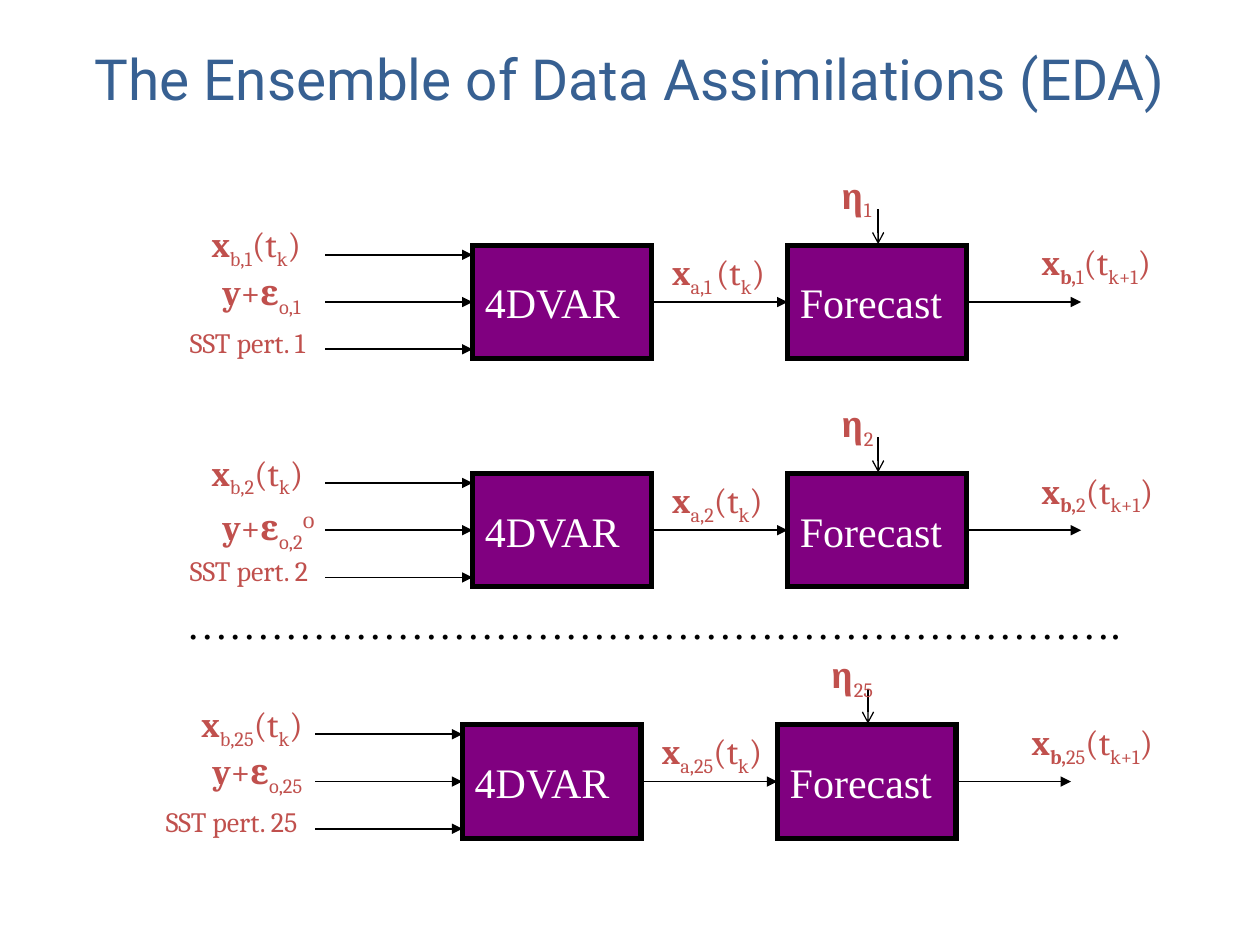
from dataclasses import dataclass

from lxml import etree
from pptx import Presentation
from pptx.dml.color import RGBColor
from pptx.enum import shapes, text
from pptx.oxml.ns import qn
from pptx.util import Pt


@dataclass(frozen=True)
class Theme:
    title_color: str = "376092"
    label_color: str = "C0504D"
    box_color: str = "800080"
    ink: str = "000000"
    paper: str = "FFFFFF"
    title_font: str = "Roboto"
    label_font: str = "Cambria"
    box_font: str = "Times New Roman"
    title_size: float = 32.4
    box_size: float = 24
    label_size: float = 20
    small_size: float = 16


BOLD, SUB, BOLD_SUB, SUPER = "bold", "sub", "bold sub", "super"


class Diagram:
    def __init__(self, slide, theme):
        self.slide, self.theme = slide, theme
        self.canvas = slide.shapes

    def start_group(self):
        self.canvas = self.slide.shapes.add_group_shape().shapes

    def end_group(self):
        self.canvas = self.slide.shapes

    def style(self, font, name, size, color):
        font.name, font.size = name, Pt(size)
        font.color.rgb = RGBColor.from_string(color)

    def text_box(self, left, top, width, height, words, name, size, color, wrap=False):
        frame = self.canvas.add_textbox(Pt(left), Pt(top), Pt(width), Pt(height)).text_frame
        frame.word_wrap = wrap
        frame.auto_size = text.MSO_AUTO_SIZE.SHAPE_TO_FIT_TEXT
        line = frame.paragraphs[0]
        line.text = words
        self.style(line.font, name, size, color)
        return frame

    def title(self, words):
        t = self.theme
        frame = self.text_box(36, 21.6, 648, 55.4, words, t.title_font, t.title_size,
                              t.title_color, wrap=True)
        frame.auto_size = text.MSO_AUTO_SIZE.NONE
        frame.vertical_anchor = text.MSO_ANCHOR.MIDDLE
        frame.margin_top, frame.margin_bottom = 0, Pt(9.6)
        frame.paragraphs[0].alignment = text.PP_ALIGN.CENTER

    def label(self, left, top, width, words, wrap=False):
        t = self.theme
        frame = self.text_box(left, top, width, 31.7, "", t.label_font, t.label_size,
                              t.label_color, wrap)
        for content, look in words:
            run = frame.paragraphs[0].add_run()
            run.text = content
            raised = look == SUPER
            self.style(run.font, t.box_font if raised else t.label_font,
                       t.box_size if raised else t.label_size, t.label_color)
            run.font.bold = BOLD in look
            if raised or SUB in look:
                run.font._element.set("baseline", "30000" if raised else "-25000")

    def box(self, left, top, width, height, words):
        t = self.theme
        step = self.canvas.add_shape(shapes.MSO_SHAPE.RECTANGLE,
                                     Pt(left), Pt(top), Pt(width), Pt(height))
        step.shadow.inherit = False
        step.fill.solid()
        step.fill.fore_color.rgb = RGBColor.from_string(t.box_color)
        step.line.color.rgb = RGBColor.from_string(t.ink)
        step.line.width = Pt(3)
        etree.SubElement(step.line._get_or_add_ln(), qn("a:miter"), lim="800000")
        frame = step.text_frame
        frame.word_wrap = False
        frame.vertical_anchor = text.MSO_ANCHOR.MIDDLE
        line = frame.paragraphs[0]
        line.text = words
        line.alignment = text.PP_ALIGN.LEFT
        self.style(line.font, t.box_font, t.box_size, t.paper)

    def arrow(self, x1, y1, x2, y2, width=1, head="triangle"):
        link = self.canvas.add_connector(shapes.MSO_CONNECTOR.STRAIGHT,
                                         Pt(x1), Pt(y1), Pt(x2), Pt(y2))
        link.line.color.rgb = RGBColor.from_string(self.theme.ink)
        link.line.width = Pt(width)
        etree.SubElement(link.line._get_or_add_ln(), qn("a:tailEnd"), type=head)
        etree.SubElement(link._element.spPr, qn("a:effectLst"))

    def member(self, x, y, number, analysis_gap="", extra=()):
        """One ensemble member; (x, y) is the corner of its 4DVAR box."""
        t = self.theme
        box_w, box_h, forecast_x = 102.2, 64.8, x + 180
        middle = y + box_h / 2
        wider = 8 * (len(number) - 1)
        time = [("(t", ""), ("k", SUB), (")", "")]
        next_time = [("(t", ""), ("k+1", SUB), (")", "")]
        self.start_group()

        # Boxes and arrows
        self.box(x, y, box_w, box_h, "4DVAR")
        self.box(forecast_x, y, box_w, box_h, "Forecast")
        for offset in (-27, 0, 27):
            self.arrow(x - 84.2, middle + offset, x, middle + offset)
        self.arrow(x + box_w, middle, forecast_x, middle)
        self.arrow(forecast_x + box_w, middle, x + 347.8, middle)
        self.arrow(x + 231.8, y - 20.6, x + 231.8, y - 0.7, 0.75, "arrow")

        # Inputs
        self.label(x - 156.2, y - 16.4, 72 + wider,
                   [("x", BOLD), (f"b,{number}", SUB), *time])
        self.label(x - 149.8, y + 10.8, 75.6,
                   [("y", BOLD), ("+", ""), ("ε", BOLD), (f"o,{number}", SUB), *extra],
                   wrap=True)
        self.text_box(x - 168.5 - wider, y + 42.1, 88.6 + wider, 26.6,
                      f"SST pert. {number}", t.label_font, t.small_size, t.label_color)

        # Analysis, model error and next background
        self.label(x + 107, y - 0.7, 71.3 + wider + 5 * len(analysis_gap),
                   [("x", BOLD), (f"a,{number}{analysis_gap}", SUB), *time])
        self.label(x + 203.4, y - 44.2, 33.1 + wider, [("η", BOLD), (number, SUB)])
        self.label(x + 318.2, y - 6.1, 89.3 + wider,
                   [("x", BOLD), ("b,", BOLD_SUB), (number, SUB), *next_time])
        self.end_group()


def main():
    deck = Presentation()
    deck.slide_width, deck.slide_height = Pt(720), Pt(540)
    theme = Theme()
    diagram = Diagram(deck.slides.add_slide(deck.slide_layouts[6]), theme)

    diagram.title("The Ensemble of Data Assimilations (EDA)")

    # Ensemble members
    diagram.member(270, 140.2, "1", analysis_gap=" ")
    diagram.member(270, 270.6, "2", extra=[("o", SUPER)])
    diagram.member(264.2, 414.2, "25")

    # Members left out
    omitted = diagram.text_box(99.4, 336.9, 553.7, 37.4, "…" * 22 + ".",
                               theme.box_font, theme.box_size, theme.ink)
    omitted.paragraphs[0].line_spacing = 1.04

    deck.save("out.pptx")


if __name__ == "__main__":
    main()
